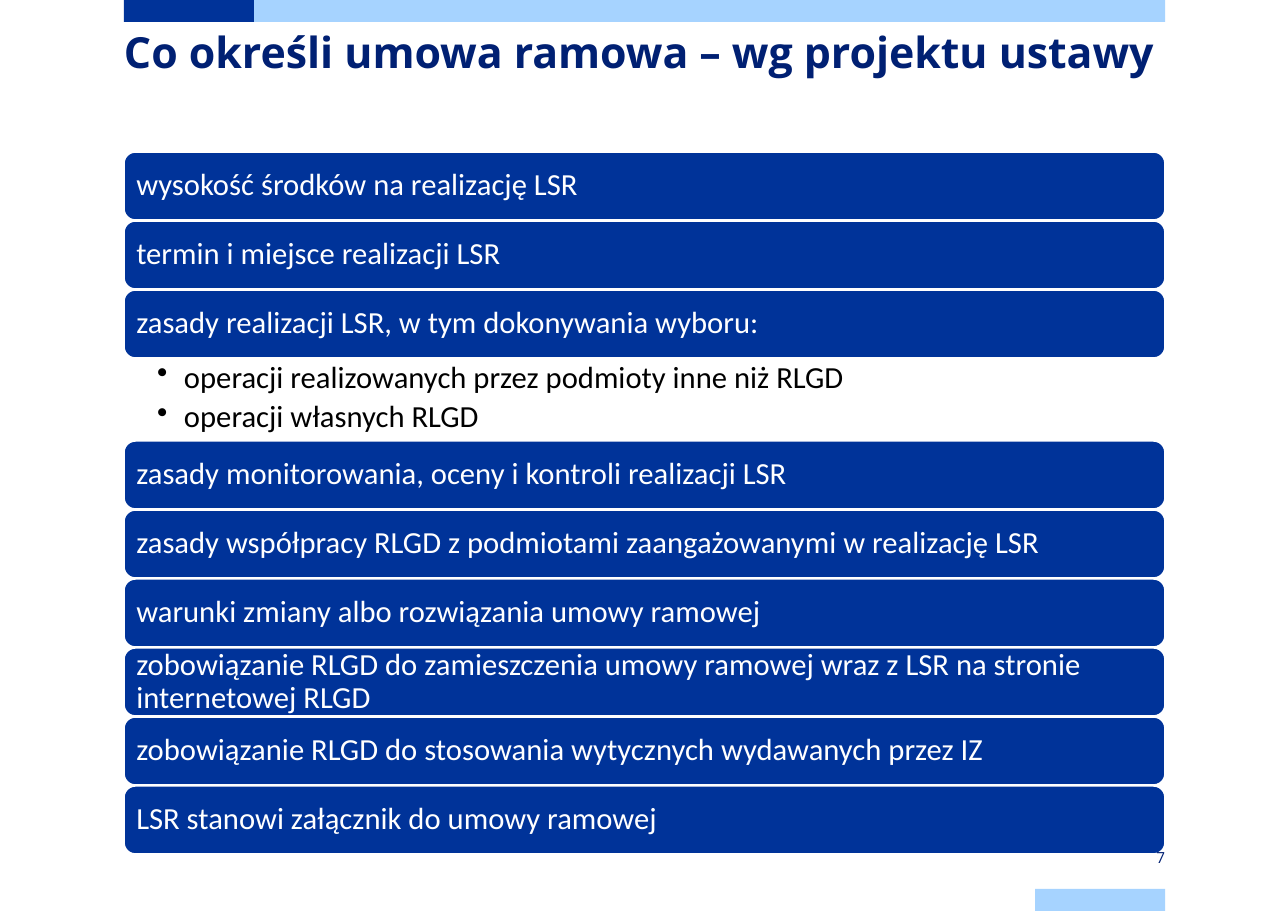
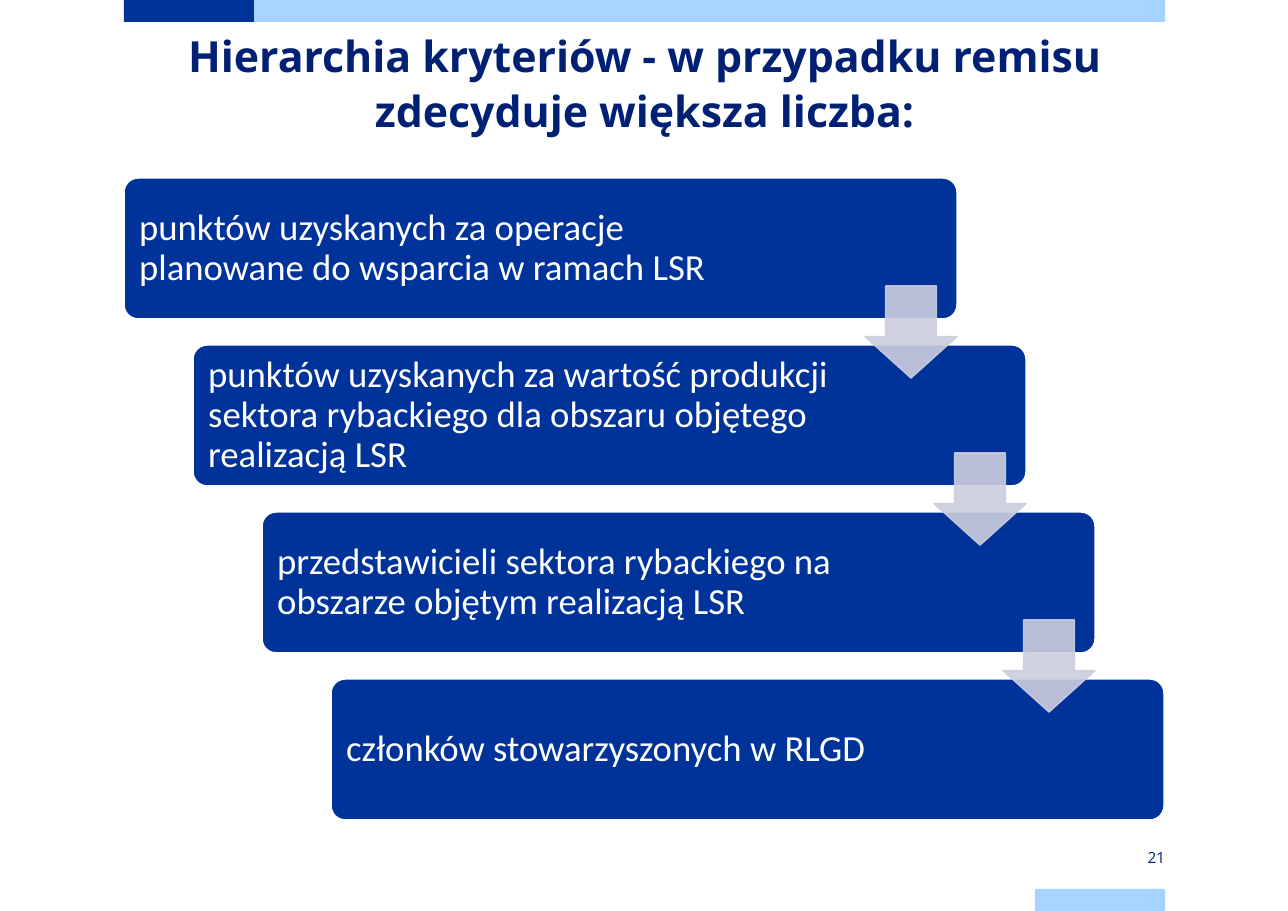
"""Two slides on the framework agreement and on the ranking of criteria."""
import lxml.etree
import pptx
import pptx.dml.color
import pptx.enum.shapes
import pptx.enum.text
import pptx.oxml.ns
import pptx.util

EMU_PER_PX = 8298
NAVY = pptx.dml.color.RGBColor(0x00, 0x33, 0x99)
SKY = pptx.dml.color.RGBColor(0xA6, 0xD3, 0xFF)
INK = pptx.dml.color.RGBColor(0x00, 0x20, 0x73)
MIST = pptx.dml.color.RGBColor(0xCC, 0xCE, 0xDE)
WHITE = pptx.dml.color.RGBColor(0xFF, 0xFF, 0xFF)
BLACK = pptx.dml.color.RGBColor(0x00, 0x00, 0x00)

SHAPE = pptx.enum.shapes.MSO_SHAPE
ALIGN = pptx.enum.text.PP_ALIGN
ANCHOR = pptx.enum.text.MSO_ANCHOR

LEFT, WIDTH = 124, 1041
BAND_HEIGHT, BAND_UNIT = 22, 130
PAGE_WIDTH, PAGE_HEIGHT = 1288, 911
CORNER_LEFT = LEFT + WIDTH - BAND_UNIT
BAR_TOP, BAR_HEIGHT, BAR_PITCH = 152, 68, 69
SUBLIST_HEIGHT, SUBLIST_INSET, BULLET_INDENT = 82, 33, 27
STEP_WIDTH, STEP_HEIGHT, STEP_TOP = 833, 141, 178
STEP_RIGHT, STEP_DOWN = 69, 167
ARROW_RIGHT, ARROW_DOWN, ARROW_SIZE = 741, 108, 92

TITLE_FONT = {"name": "Open Sans", "size": pptx.util.Pt(28), "bold": True}
NUMBER_FONT = {"name": "Open Sans", "size": pptx.util.Pt(10)}
BAR_FONT = {"name": "Calibri", "size": pptx.util.Pt(20)}
STEP_FONT = {"name": "Calibri", "size": pptx.util.Pt(24)}

AGREEMENT = [
    ("wysokość środków na realizację LSR", []),
    ("termin i miejsce realizacji LSR", []),
    ("zasady realizacji LSR, w tym dokonywania wyboru:",
     ["operacji realizowanych przez podmioty inne niż RLGD",
      "operacji własnych RLGD"]),
    ("zasady monitorowania, oceny i kontroli realizacji LSR", []),
    ("zasady współpracy RLGD z podmiotami zaangażowanymi w realizację LSR", []),
    ("warunki zmiany albo rozwiązania umowy ramowej", []),
    ("zobowiązanie RLGD do zamieszczenia umowy ramowej wraz z LSR "
     "na stronie internetowej RLGD", []),
    ("zobowiązanie RLGD do stosowania wytycznych wydawanych przez IZ", []),
    ("LSR stanowi załącznik do umowy ramowej", []),
]
CRITERIA = [
    "punktów uzyskanych za operacje planowane do wsparcia w ramach LSR",
    "punktów uzyskanych za wartość produkcji sektora rybackiego "
    "dla obszaru objętego realizacją LSR",
    "przedstawicieli sektora rybackiego na obszarze objętym realizacją LSR",
    "członków stowarzyszonych w RLGD",
]


def px(*lengths):
    """Turn pixel lengths into EMU."""
    return [pptx.util.Emu(length * EMU_PER_PX) for length in lengths]


def set_format(target, values):
    """Set each named attribute of the target."""
    for name, value in values.items():
        setattr(target, name, value)


def set_frame(frame, insets=(0, 0, 0, 0), anchor=ANCHOR.MIDDLE):
    """Set the insets, anchor and wrapping of a text frame."""
    left, top, right, bottom = px(*insets)
    set_format(frame, {
        "margin_left": left, "margin_top": top,
        "margin_right": right, "margin_bottom": bottom,
        "vertical_anchor": anchor, "word_wrap": True,
        "auto_size": pptx.enum.text.MSO_AUTO_SIZE.NONE,
    })


def write(paragraph, text, font, color, **layout):
    """Fill a paragraph with formatted text."""
    paragraph.text = text
    set_format(paragraph, layout)
    set_format(paragraph.font, font)
    paragraph.font.color.rgb = color


def add_block(slide, preset, box, fill, line=None):
    """Add a flat filled preset shape."""
    block = slide.shapes.add_shape(preset, *px(*box))
    block.shadow.inherit = False
    block.fill.solid()
    block.fill.fore_color.rgb = fill
    if line is None:
        block.line.fill.background()
    else:
        block.line.color.rgb = line
        block.line.width = pptx.util.Pt(1)
    return block


def add_panel(slide, box, text, font, insets):
    """Add a rounded navy panel holding white text."""
    panel = add_block(slide, SHAPE.ROUNDED_RECTANGLE, box, NAVY, WHITE)
    set_frame(panel.text_frame, insets)
    write(panel.text_frame.paragraphs[0], text, font, WHITE,
          alignment=ALIGN.LEFT, line_spacing=0.9)
    return panel


def add_sublist(slide, top, items):
    """Add the bulleted list below a bar."""
    sublist = slide.shapes.add_textbox(*px(LEFT, top, WIDTH, SUBLIST_HEIGHT))
    frame = sublist.text_frame
    set_frame(frame, (SUBLIST_INSET, 3, 18, 3), ANCHOR.TOP)
    indent, = px(BULLET_INDENT)
    for index, item in enumerate(items):
        paragraph = frame.add_paragraph() if index else frame.paragraphs[0]
        properties = paragraph._p.get_or_add_pPr()
        properties.set("marL", str(indent))
        properties.set("indent", str(-indent))
        bullet = lxml.etree.SubElement(properties, pptx.oxml.ns.qn("a:buChar"))
        bullet.set("char", "•")
        write(paragraph, item, BAR_FONT, BLACK,
              line_spacing=0.9, space_after=pptx.util.Pt(4))


def add_arrow(slide, left, top):
    """Add a translucent arrow that leads to the next step."""
    arrow = add_block(slide, SHAPE.DOWN_ARROW,
                      (left, top, ARROW_SIZE, ARROW_SIZE), MIST, MIST)
    arrow.adjustments[0], arrow.adjustments[1] = 0.55, 0.45
    for color in arrow.element.spPr.iter(pptx.oxml.ns.qn("a:srgbClr")):
        alpha = lxml.etree.SubElement(color, pptx.oxml.ns.qn("a:alpha"))
        alpha.set("val", "90000")


def add_bands(slide):
    """Place the shared colour bands on the layout of the slide."""
    layout = slide.slide_layout
    for placeholder in list(layout.placeholders):
        if placeholder.placeholder_format.idx:
            layout.shapes.element.remove(placeholder.element)
    bands = [
        add_block(slide, SHAPE.RECTANGLE, (left, top, width, BAND_HEIGHT), fill)
        for left, top, width, fill in (
            (LEFT, 0, BAND_UNIT, NAVY),
            (LEFT + BAND_UNIT, 0, WIDTH - BAND_UNIT, SKY),
            (CORNER_LEFT, PAGE_HEIGHT - BAND_HEIGHT, BAND_UNIT, SKY),
        )
    ]
    for band in bands:
        layout.shapes.element.append(band.element)


def set_heading(slide, text, top, alignment, number):
    """Fill the title and add the page number."""
    title = slide.shapes.title
    left, top, width, height = px(LEFT, top, WIDTH, BAND_UNIT)
    set_format(title, {"left": left, "top": top, "width": width, "height": height})
    set_frame(title.text_frame, anchor=ANCHOR.TOP)
    write(title.text_frame.paragraphs[0], text, TITLE_FONT, INK,
          alignment=alignment, line_spacing=pptx.util.Pt(36))
    page_number = slide.shapes.add_textbox(
        *px(CORNER_LEFT, 846, BAND_UNIT, BAND_HEIGHT))
    set_frame(page_number.text_frame)
    write(page_number.text_frame.paragraphs[0], number, NUMBER_FONT, INK,
          alignment=ALIGN.RIGHT)


def build_agreement(slide):
    """Stack the terms of the agreement as bars."""
    top = BAR_TOP
    for term, details in AGREEMENT:
        add_panel(slide, (LEFT, top, WIDTH, BAR_HEIGHT), term, BAR_FONT, (9, 0, 9, 0))
        top += BAR_PITCH
        if details:
            add_sublist(slide, top, details)
            top += SUBLIST_HEIGHT
    set_heading(slide, "Co określi umowa ramowa – wg projektu ustawy",
                22, ALIGN.LEFT, "7")


def build_criteria(slide):
    """Lay the criteria out as descending steps joined by arrows."""
    corners = [(LEFT + STEP_RIGHT * rank, STEP_TOP + STEP_DOWN * rank)
               for rank in range(len(CRITERIA))]
    for (left, top), criterion in zip(corners, CRITERIA):
        step = add_panel(slide, (left, top, STEP_WIDTH, STEP_HEIGHT), criterion,
                         STEP_FONT, (11, 7, 172, 7))
        step.adjustments[0] = 0.1
    for left, top in corners[:-1]:
        add_arrow(slide, left + ARROW_RIGHT, top + ARROW_DOWN)
    set_heading(slide, "Hierarchia kryteriów - w przypadku remisu "
                "zdecyduje większa liczba:", 26, ALIGN.CENTER, "21")


def main():
    """Build and save the presentation."""
    deck = pptx.Presentation()
    deck.slide_width, deck.slide_height = px(PAGE_WIDTH, PAGE_HEIGHT)
    title_only = deck.slide_layouts[5]
    agreement = deck.slides.add_slide(title_only)
    add_bands(agreement)
    build_agreement(agreement)
    build_criteria(deck.slides.add_slide(title_only))
    deck.save("out.pptx")


if __name__ == "__main__":
    main()
